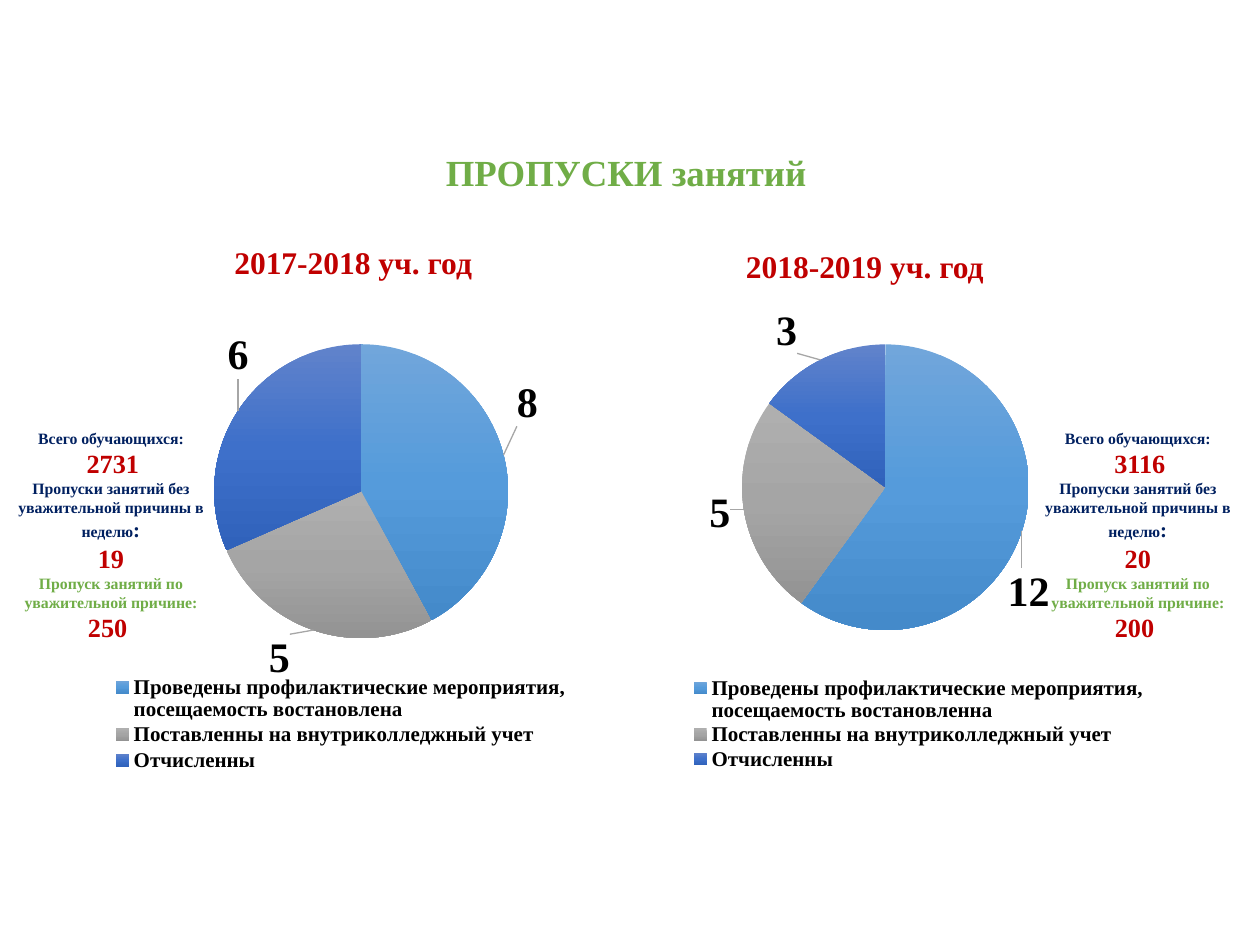
from lxml.etree import fromstring
from pptx import Presentation
from pptx.chart.data import CategoryChartData
from pptx.dml.color import RGBColor
from pptx.enum.chart import XL_CHART_TYPE as ChartType
from pptx.enum.chart import XL_LABEL_POSITION as LabelPosition
from pptx.enum.chart import XL_LEGEND_POSITION as LegendPosition
from pptx.enum.text import PP_ALIGN as Align
from pptx.oxml.ns import nsdecls, qn
from pptx.util import Inches, Pt

FONT = "Times New Roman"
BLACK = RGBColor(0x00, 0x00, 0x00)
RED = RGBColor(0xC0, 0x00, 0x00)
NAVY = RGBColor(0x00, 0x20, 0x60)
GREEN = RGBColor(0x70, 0xAD, 0x47)
LEADER_GRAY = RGBColor(0xA6, 0xA6, 0xA6)
BLUE_SHADES = (
    RGBColor(0x71, 0xA6, 0xDB), RGBColor(0x55, 0x9B, 0xDB), RGBColor(0x44, 0x8A, 0xCA))
GRAY_SHADES = (
    RGBColor(0xAF, 0xAF, 0xAF), RGBColor(0xA5, 0xA5, 0xA5), RGBColor(0x93, 0x93, 0x93))
INDIGO_SHADES = (
    RGBColor(0x61, 0x83, 0xCB), RGBColor(0x3E, 0x70, 0xCA), RGBColor(0x30, 0x62, 0xBB))
SLICE_SHADES = (BLUE_SHADES, GRAY_SHADES, INDIGO_SHADES)


def style_font(font, size, color=BLACK, bold=True):
    font.name = FONT
    font.size = Pt(size)
    font.bold = bold
    font.color.rgb = color


def add_span(para, text, size, color):
    span = para.add_run()
    span.text = text
    style_font(span.font, size, color)


def add_text(page, paragraphs, left, top, width, height):
    box = page.shapes.add_textbox(
        Inches(left), Inches(top), Inches(width), Inches(height))
    frame = box.text_frame
    frame.word_wrap = True
    frame.margin_left = frame.margin_right = Inches(0.07)
    frame.margin_top = frame.margin_bottom = Inches(0.04)
    for index, spans in enumerate(paragraphs):
        para = frame.add_paragraph() if index else frame.paragraphs[0]
        para.alignment = Align.CENTER
        for text, size, color in spans:
            add_span(para, text, size, color)


def add_attendance(page, left, total, unexcused, excused):
    paragraphs = [
        [("Всего обучающихся:", 9, NAVY)],
        [(" ", 9, NAVY), (total, 15, RED)],
        [("Пропуски занятий без уважительной причины в неделю", 9, NAVY),
         (":", 12, NAVY)],
        [(unexcused, 15, RED)],
        [("Пропуск занятий по уважительной причине:", 9, GREEN)],
        [(excused + " ", 15, RED)],
    ]
    add_text(page, paragraphs, left, 3.36, 2.02, 1.82)


def make_layout(x, y, width=None, height=None, inner=False):
    target = '<c:layoutTarget val="inner"/>' if inner else ""
    modes, size = "", ""
    if width:
        modes = '<c:xMode val="edge"/><c:yMode val="edge"/>'
        size = f'<c:w val="{width}"/><c:h val="{height}"/>'
    return fromstring(
        f'<c:layout {nsdecls("c")}><c:manualLayout>{target}{modes}'
        f'<c:x val="{x}"/><c:y val="{y}"/>{size}</c:manualLayout></c:layout>')


def place_part(parent, layout, before):
    for old in parent.findall(qn("c:layout")):
        parent.remove(old)
    anchor = parent.find(qn(before))
    anchor.addprevious(layout)


def fill_slice(point, shades):
    fill = point.format.fill
    fill.solid()
    stops = "".join(
        f'<a:gs pos="{index * 50000}"><a:srgbClr val="{shade}"/></a:gs>'
        for index, shade in enumerate(shades))
    gradient = fromstring(
        f'<a:gradFill {nsdecls("a")} rotWithShape="1"><a:gsLst>{stops}</a:gsLst>'
        '<a:lin ang="5400000" scaled="0"/></a:gradFill>')
    solid = next(point.format._element.iter(qn("a:solidFill")))
    solid.getparent().replace(solid, gradient)
    point.format.line.fill.background()


def label_slices(series, offsets):
    labels = series.data_labels
    labels.show_value = True
    labels.position = LabelPosition.OUTSIDE_END
    style_font(labels.font, 24)
    group = series._element.find(qn("c:dLbls"))
    for old in group.findall(qn("c:showLeaderLines")):
        group.remove(old)
    group.append(fromstring(f'<c:showLeaderLines {nsdecls("c")} val="1"/>'))
    group.append(fromstring(
        f'<c:leaderLines {nsdecls("c", "a")}><c:spPr><a:ln w="9525"><a:solidFill>'
        f'<a:srgbClr val="{LEADER_GRAY}"/></a:solidFill></a:ln></c:spPr></c:leaderLines>'))
    for index, _ in enumerate(offsets):
        label = series.points[index].data_label
        label.position = LabelPosition.OUTSIDE_END
        style_font(label.font, 24)
    for item, offset in zip(group.findall(qn("c:dLbl")), offsets):
        item.find(qn("c:idx")).addnext(make_layout(*offset))


def add_pie(page, place, restored, values, plot_area, legend_area, offsets):
    data = CategoryChartData()
    data.categories = [
        f"Проведены профилактические мероприятия, посещаемость {restored}",
        "Поставленны на внутриколледжный учет",
        "Отчисленны",
    ]
    data.add_series("Series 1", values)
    chart = page.shapes.add_chart(
        ChartType.PIE, *[Inches(length) for length in place], data).chart
    style_font(chart.font, 10, bold=False)
    chart.has_title = False
    chart.has_legend = True
    chart.legend.position = LegendPosition.BOTTOM
    chart.legend.include_in_layout = False
    style_font(chart.legend.font, 12)
    chart.plots[0].vary_by_categories = True
    series = chart.plots[0].series[0]
    for index, shades in enumerate(SLICE_SHADES):
        fill_slice(series.points[index], shades)
    label_slices(series, offsets)
    area = chart._chartSpace.find(".//" + qn("c:plotArea"))
    place_part(area, make_layout(*plot_area, inner=True), "c:pieChart")
    place_part(chart.legend._element, make_layout(*legend_area), "c:overlay")


def main():
    deck = Presentation()
    deck.slide_width, deck.slide_height = Inches(10), Inches(7.5)
    page = deck.slides.add_slide(deck.slide_layouts[6])
    add_pie(page, (4.6, 2.43, 4.94, 3.7), "востановленна", (12, 5, 3),
            (0.231, 0.079, 0.521, 0.615), (0.17, 0.79, 0.75, 0.21),
            ((-0.034, 0.075), (-0.01, -0.045), (-0.032, 0)))
    add_text(page, [[("2018-2019 уч. год ", 18, RED)]], 5.82, 1.92, 2.15, 0.4)
    add_attendance(page, -0.13, "2731", "19", "250")
    add_pie(page, (0.36, 2.43, 4.94, 3.83), "востановлена", (8, 5, 6),
            (0.244, 0.079, 0.527, 0.609), (0.1, 0.76, 0.75, 0.21),
            ((0.01, -0.056), (-0.034, -0.006), (0.027, -0.058)))
    add_text(page, [[("2017-2018 уч. год ", 18, RED)]], 1.76, 1.89, 2.15, 0.4)
    add_text(page, [[("ПРОПУСКИ занятий", 21, GREEN)]], 0.09, 1.15, 9.76, 0.45)
    add_attendance(page, 8.02, "3116", "20", "200")
    deck.save("out.pptx")


if __name__ == "__main__":
    main()
